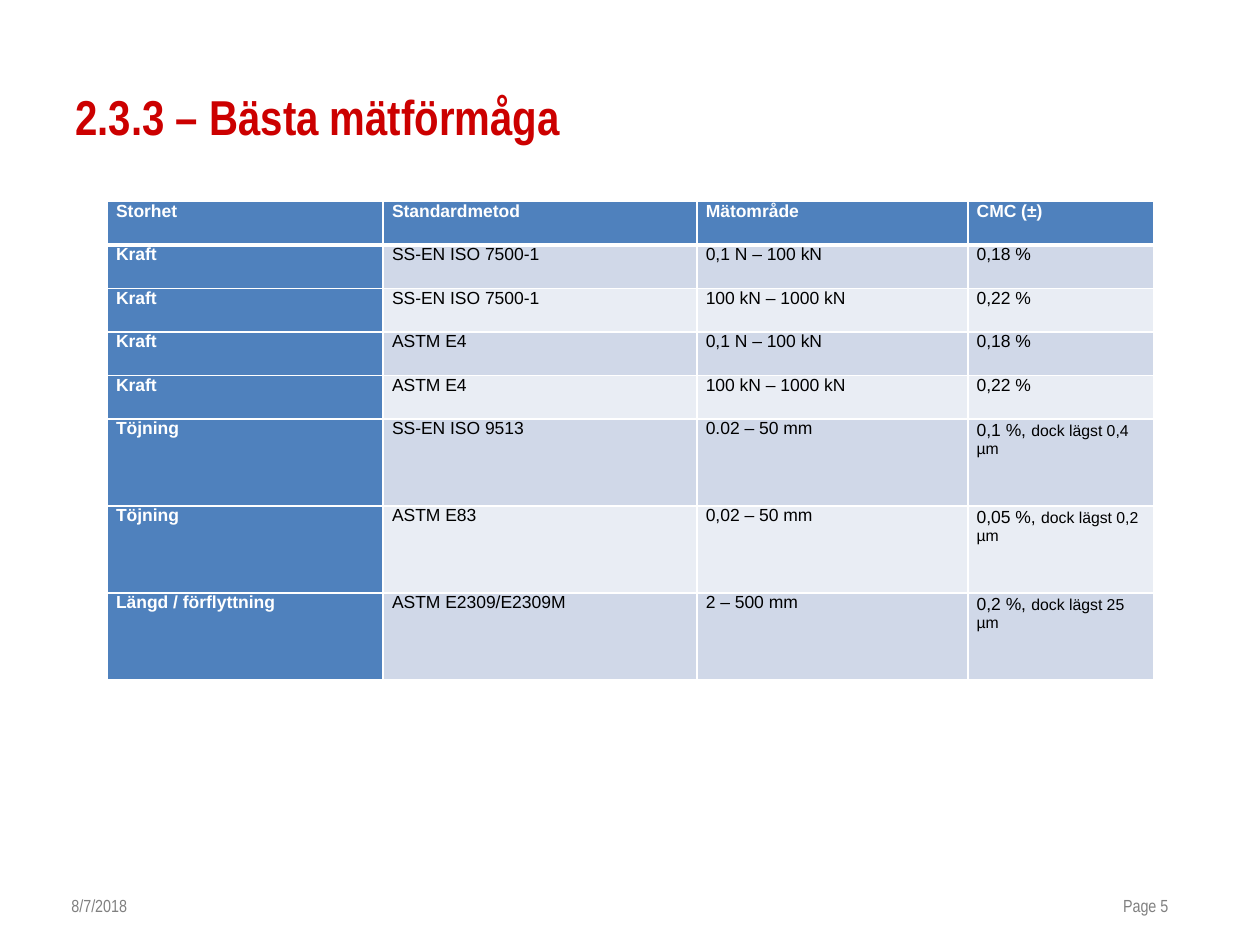
from dataclasses import dataclass

from lxml.etree import SubElement
from pptx import Presentation
from pptx.dml.color import RGBColor as RGB
from pptx.enum.text import MSO_ANCHOR as Anchor
from pptx.oxml.ns import qn
from pptx.util import Cm, Pt


@dataclass(frozen=True)
class Theme:
    title_font: str = "Arial Narrow"
    body_font: str = "Arial"
    title_size: float = 28
    body_size: float = 10
    gap_size: float = 11
    limit_size: float = 9
    title: str = "CC0000"
    footer: str = "808080"
    heading_fill: str = "4F81BD"
    bands: tuple = ("D0D8E8", "E9EDF4")
    light: str = "FFFFFF"
    dark: str = "000000"
    rule: float = 1
    heading_rule: float = 3


THEME = Theme()

HEADINGS = ("Storhet", "Standardmetod", "Mätområde", "CMC (±)")
# Quantity, method, range, uncertainty and, where it applies, its lower limit
CAPABILITIES = (
    ("Kraft", "SS-EN ISO 7500-1", "0,1 N – 100 kN", "0,18 %"),
    ("Kraft", "SS-EN ISO 7500-1", "100 kN – 1000 kN", "0,22 %"),
    ("Kraft", "ASTM E4", "0,1 N – 100 kN", "0,18 %"),
    ("Kraft", "ASTM E4", "100 kN – 1000 kN", "0,22 %"),
    ("Töjning", "SS-EN ISO 9513", "0.02 – 50 mm", "0,1 %,", "dock lägst 0,4 µm"),
    ("Töjning", "ASTM E83", "0,02 – 50 mm", "0,05 %,", "dock lägst 0,2 µm"),
    ("Längd / förflyttning", "ASTM E2309/E2309M", "2 – 500 mm", "0,2 %,", "dock lägst 25 µm"),
)
COLUMN_SHARES = (2.19, 2.49, 2.15, 1.48)


def add_run(paragraph, text, size, font, color, bold=False):
    run = paragraph.add_run()
    run.text = text
    run.font.size = Pt(size)
    run.font.name = font
    run.font.bold = bold
    run.font.color.rgb = RGB.from_string(color)


def add_line(slide, box, text, size, color, bold=False):
    """One line of narrow type, centred vertically in its box."""
    frame = slide.shapes.add_textbox(*map(Cm, box)).text_frame
    frame.word_wrap = True
    frame.vertical_anchor = Anchor.MIDDLE
    add_run(frame.paragraphs[0], text, size, THEME.title_font, color, bold)


def add_footer(slide, box):
    left, top, width, height = box
    date_width, page_width = 2.41, 1.91
    for text, x, w in (
        ("8/7/2018", left, date_width),
        ("Page 5", left + width - page_width, page_width),
    ):
        add_line(slide, (x, top, w, height), text, THEME.body_size, THEME.footer)


def set_borders(cell, top, bottom):
    properties = cell._tc.get_or_add_tcPr()
    widths = {"lnL": THEME.rule, "lnR": THEME.rule, "lnT": top, "lnB": bottom}
    for side, width in widths.items():
        line = SubElement(properties, qn(f"a:{side}"), w=str(Pt(width)))
        fill = SubElement(line, qn("a:solidFill"))
        SubElement(fill, qn("a:srgbClr"), val=THEME.light)


def fill_cell(cell, parts, row, column):
    heading = row == 0 or column == 0
    set_borders(
        cell,
        top=THEME.heading_rule if row == 1 else THEME.rule,
        bottom=THEME.heading_rule if row == 0 else THEME.rule,
    )
    cell.fill.solid()
    color = THEME.heading_fill if heading else THEME.bands[(row - 1) % 2]
    cell.fill.fore_color.rgb = RGB.from_string(color)
    cell.margin_left = cell.margin_right = Cm(0.18)
    cell.margin_top = cell.margin_bottom = 0
    cell.vertical_anchor = Anchor.TOP

    paragraph = cell.text_frame.paragraphs[0]
    ink = THEME.light if heading else THEME.dark
    add_run(paragraph, parts[0], THEME.body_size, THEME.body_font, ink, heading)
    for limit in parts[1:]:
        add_run(paragraph, " ", THEME.gap_size, THEME.body_font, ink)
        add_run(paragraph, limit, THEME.limit_size, THEME.body_font, ink)


def add_capability_table(slide, box):
    rows = (HEADINGS,) + CAPABILITIES
    count = len(HEADINGS)
    table = slide.shapes.add_table(len(rows), count, *map(Cm, box)).table
    table.horz_banding = False
    _, _, width, height = box

    for column, share in zip(table.columns, COLUMN_SHARES):
        column.width = Cm(width * share / sum(COLUMN_SHARES))
    # Rows with a lower limit are twice as tall
    units = [2 if len(values) > count else 1 for values in rows]
    for row, unit in zip(table.rows, units):
        row.height = Cm(height * unit / sum(units))

    for r, values in enumerate(rows):
        cells = [(value,) for value in values[: count - 1]] + [values[count - 1:]]
        for c, parts in enumerate(cells):
            fill_cell(table.cell(r, c), parts, r, c)


def main():
    deck = Presentation()
    deck.slide_width, deck.slide_height = Cm(25.4), Cm(19.05)
    slide = deck.slides.add_slide(deck.slide_layouts[6])

    # Footer, title and table
    add_footer(slide, (1.19, 17.91, 23.11, 0.69))
    add_line(slide, (1.27, 0.76, 20.17, 3.15), "2.3.3 – Bästa mätförmåga",
             THEME.title_size, THEME.title, bold=True)
    add_capability_table(slide, (2.16, 4.06, 21.11, 9.65))

    deck.save("out.pptx")


if __name__ == "__main__":
    main()
